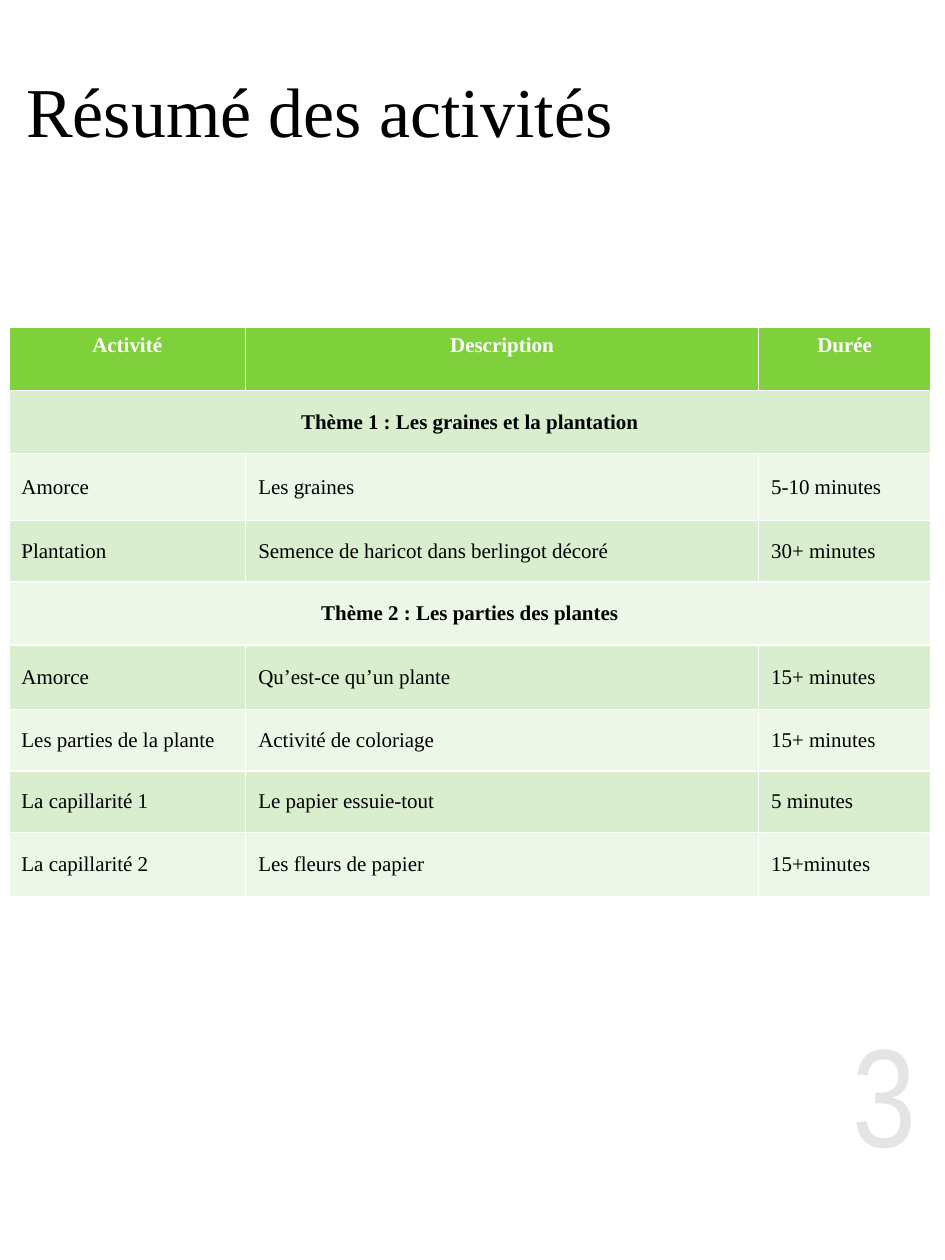
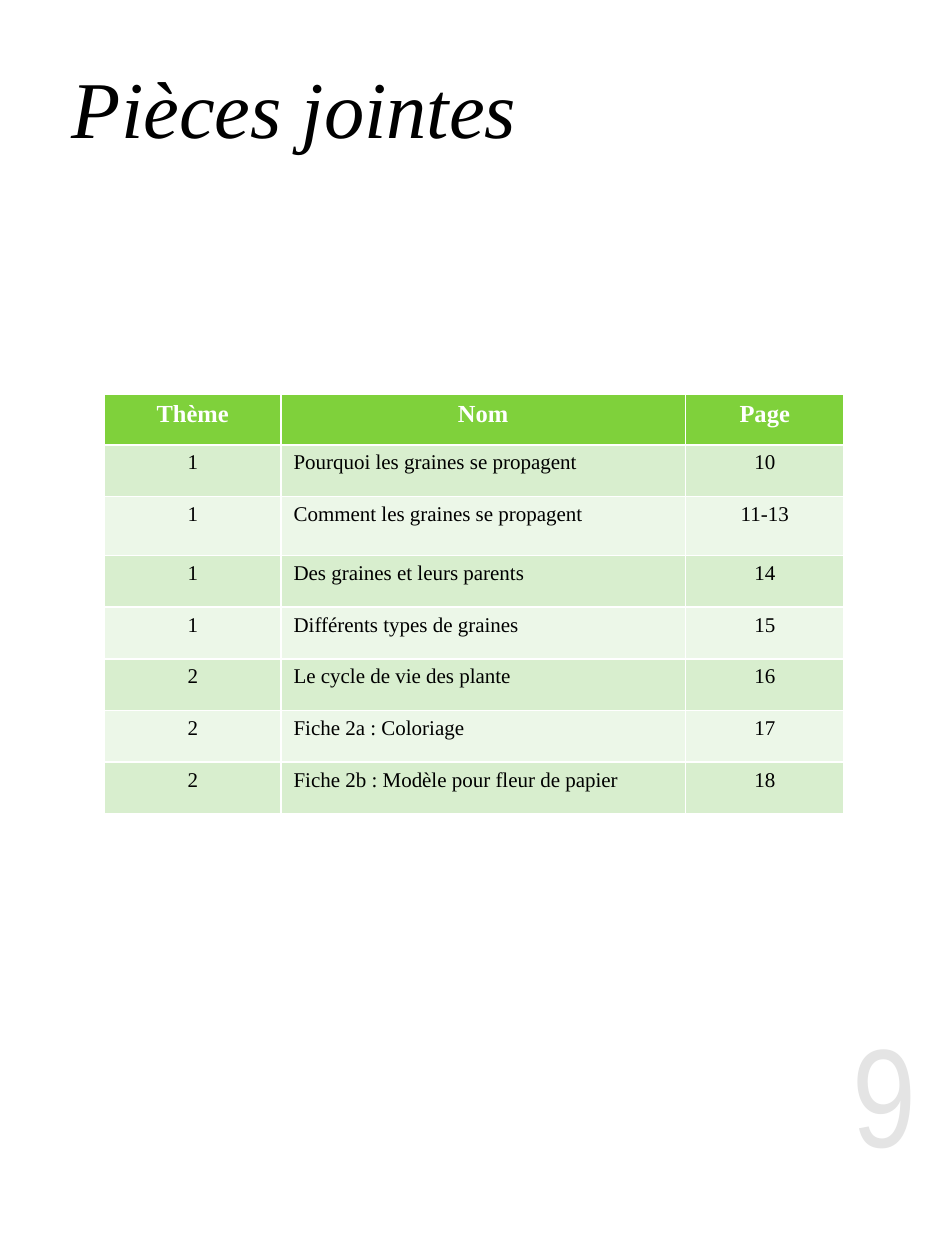
from pptx import Presentation
from pptx.dml.color import RGBColor
from pptx.enum.text import MSO_ANCHOR as Anchor, PP_ALIGN as Align
from pptx.util import Inches, Pt

WIDE, HIGH = 7.5, 10
SERIF, NARROW = "Times New Roman", "Arial Narrow"
BLACK, WHITE, GREY = "000000", "FFFFFF", "E4E4E4"
HEAD, BANDS = "7FD13B", ("D8EECE", "ECF7E8")

# A row with a single entry is a theme heading across all columns.
PAGES = [
    dict(
        title="Résumé des activités", box=(0.11, 0.39, 5.06, 0.95),
        size=40, italic=False, align=Align.LEFT, number="3",
        at=(0.07, 2.6), cols=(1.88, 4.07, 1.37),
        heights=(0.5, 0.5, 0.53, 0.49, 0.5, 0.51, 0.49, 0.49, 0.51),
        head_size=12, anchor=Anchor.MIDDLE, centred=(),
        rows=[
            ("Activité", "Description", "Durée"),
            ("Thème 1 : Les graines et la plantation",),
            ("Amorce", "Les graines", "5-10 minutes"),
            ("Plantation", "Semence de haricot dans berlingot décoré",
             "30+ minutes"),
            ("Thème 2 : Les parties des plantes",),
            ("Amorce", "Qu’est-ce qu’un plante", "15+ minutes"),
            ("Les parties de la plante", "Activité de coloriage",
             "15+ minutes"),
            ("La capillarité 1", "Le papier essuie-tout", "5 minutes"),
            ("La capillarité 2", "Les fleurs de papier", "15+minutes"),
        ],
    ),
    dict(
        title="Pièces jointes", box=(0, 0.37, 4.67, 0.95),
        size=46, italic=True, align=Align.CENTER, number="9",
        at=(0.83, 3.13), cols=(1.4, 3.21, 1.26),
        heights=(0.4, 0.41, 0.47) + (0.41,) * 5,
        head_size=14, anchor=Anchor.TOP, centred=(0, 2),
        rows=[
            ("Thème", "Nom", "Page"),
            ("1", "Pourquoi les graines se propagent", "10"),
            ("1", "Comment les graines se propagent", "11-13"),
            ("1", "Des graines et leurs parents", "14"),
            ("1", "Différents types de graines", "15"),
            ("2", "Le cycle de vie des plante", "16"),
            ("2", "Fiche 2a : Coloriage", "17"),
            ("2", "Fiche 2b : Modèle pour fleur de papier", "18"),
        ],
    ),
]


def paint(hue):
    return RGBColor.from_string(hue)


def write(frame, text, size, hue, align, face=SERIF, bold=False, italic=False):
    para = frame.paragraphs[0]
    para.text, para.alignment = text, align
    font = para.font
    font.name, font.size = face, Pt(size)
    font.bold, font.italic = bold, italic
    font.color.rgb = paint(hue)


def add_text(slide, box, anchor, *args, **style):
    frame = slide.shapes.add_textbox(*map(Inches, box)).text_frame
    frame.word_wrap = True
    frame.vertical_anchor = anchor
    write(frame, *args, **style)


def add_grid(slide, page):
    rows, cols, heights = page["rows"], page["cols"], page["heights"]
    spot = (*page["at"], sum(cols), sum(heights))
    grid = slide.shapes.add_table(
        len(rows), len(cols), *map(Inches, spot)).table
    for col, width in zip(grid.columns, cols):
        col.width = Inches(width)
    for r, (row, height) in enumerate(zip(rows, heights)):
        grid.rows[r].height = Inches(height)
        top, theme = r == 0, len(row) == 1
        for c in range(len(cols)):
            cell = grid.cell(r, c)
            cell.fill.solid()
            cell.fill.fore_color.rgb = paint(HEAD if top else BANDS[(r - 1) % 2])
            cell.vertical_anchor = Anchor.TOP if top else page["anchor"]
        if theme:
            grid.cell(r, 0).merge(grid.cell(r, len(cols) - 1))
        for c, text in enumerate(row):
            mid = top or theme or c in page["centred"]
            write(grid.cell(r, c).text_frame, text,
                  page["head_size"] if top else 12,
                  WHITE if top else BLACK,
                  Align.CENTER if mid else Align.LEFT, bold=top or theme)


def main():
    deck = Presentation()
    deck.slide_width, deck.slide_height = Inches(WIDE), Inches(HIGH)
    for page in PAGES:
        slide = deck.slides.add_slide(deck.slide_layouts[6])
        add_text(slide, page["box"], Anchor.MIDDLE, page["title"],
                 page["size"], BLACK, page["align"], italic=page["italic"])
        add_grid(slide, page)
        add_text(slide, (WIDE - 1.63, 7.95, 1.5, 1.4), Anchor.TOP,
                 page["number"], 80, GREY, Align.RIGHT, face=NARROW)
    deck.save("out.pptx")


if __name__ == "__main__":
    main()
